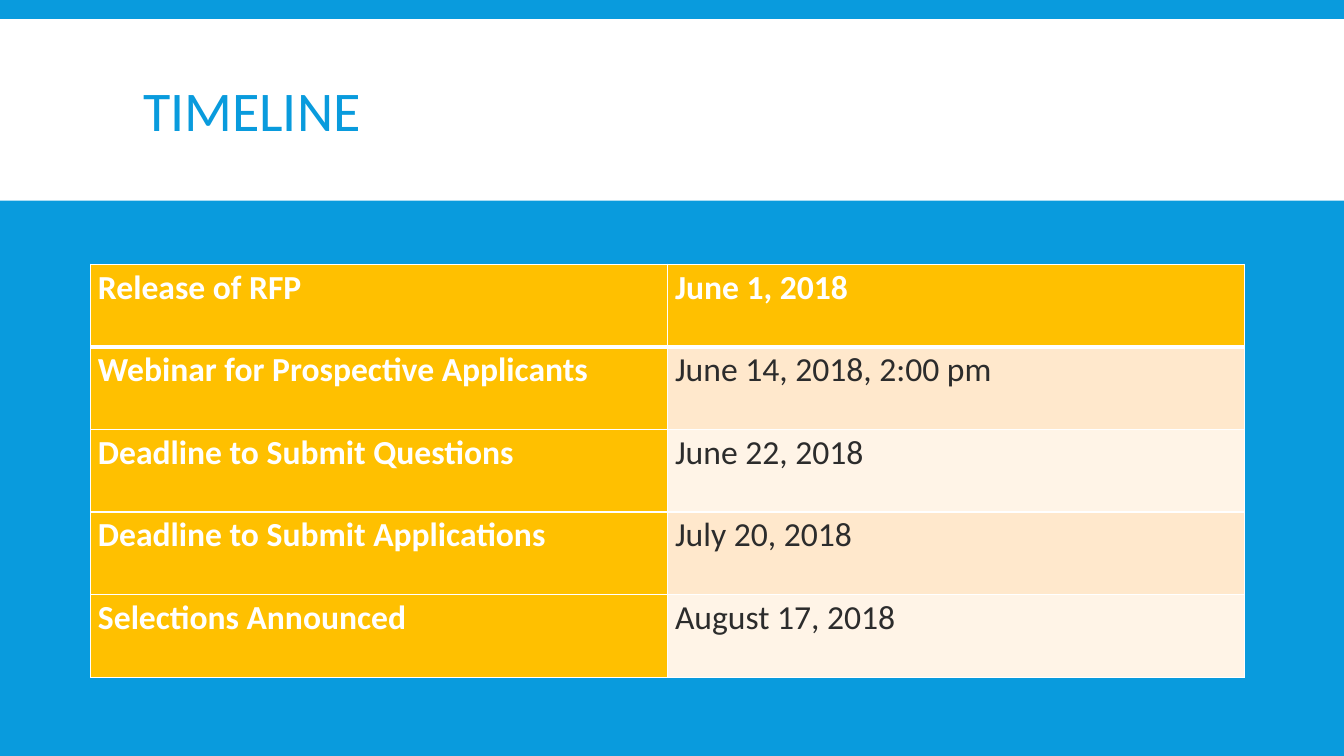
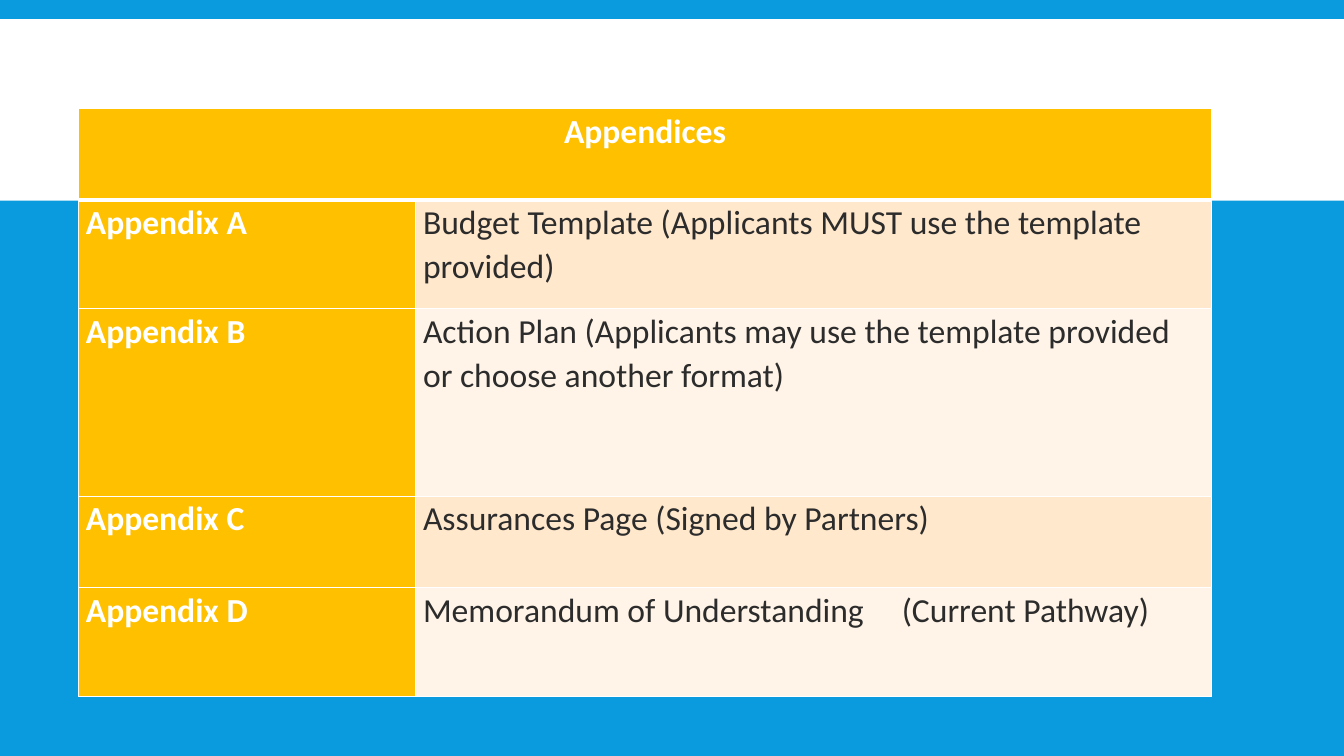
from lxml.etree import SubElement
from pptx import Presentation
from pptx.dml.color import RGBColor
from pptx.enum.shapes import MSO_SHAPE
from pptx.enum.text import MSO_ANCHOR, MSO_AUTO_SIZE, PP_ALIGN
from pptx.oxml import parse_xml
from pptx.oxml.ns import nsdecls, qn
from pptx.util import Pt

BLUE, WHITE, INK, GOLD = "099BDD", "FFFFFF", "2C2C2C", "FFC000"
STRIPES = ["FFE8CC", "FFF4E7"]
FONT = "Calibri"
SLIDE_WIDTH, SLIDE_HEIGHT = 960, 540
TITLE_ONLY, BLANK = 5, 6

TIMELINE = [
    ("Release of RFP", "June 1, 2018"),
    ("Webinar for Prospective Applicants", "June 14, 2018, 2:00 pm"),
    ("Deadline to Submit Questions", "June 22, 2018"),
    ("Deadline to Submit Applications", "July 20, 2018"),
    ("Selections Announced", "August 17, 2018"),
]
APPENDICES = [
    ("Appendices", ""),
    ("Appendix A", "Budget Template (Applicants MUST use the template provided)"),
    ("Appendix B", "Action Plan (Applicants may use the template provided or choose another format)"),
    ("Appendix C", "Assurances Page (Signed by Partners)"),
    ("Appendix D", "Memorandum of Understanding\t(Current Pathway)"),
]


def paint(fill, colour):
    """Give a fill one solid colour."""
    fill.solid()
    fill.fore_color.rgb = RGBColor.from_string(colour)


def write(frame, text, size=24, colour=INK, bold=False, align=PP_ALIGN.LEFT, spacing=1.07, tab=None):
    """Write one formatted paragraph, with an optional tab stop."""
    paragraph = frame.paragraphs[0]
    paragraph.alignment = align
    paragraph.line_spacing = spacing
    if tab:
        stops = SubElement(paragraph._p.get_or_add_pPr(), qn("a:tabLst"))
        SubElement(stops, qn("a:tab"), pos=str(Pt(tab)), algn="l")
    run = paragraph.add_run()
    run.text = text
    run.font.name = FONT
    run.font.size = Pt(size)
    run.font.bold = bold
    run.font.color.rgb = RGBColor.from_string(colour)


def border(cell, top=1, bottom=1):
    """Draw white lines round a cell, with widths in points."""
    widths = {"lnL": 1, "lnR": 1, "lnT": top, "lnB": bottom}
    properties = cell._tc.get_or_add_tcPr()
    for position, (side, width) in enumerate(widths.items()):
        properties.insert(position, parse_xml(
            f'<a:{side} {nsdecls("a")} w="{Pt(width)}"><a:solidFill>'
            f'<a:srgbClr val="{WHITE}"/></a:solidFill></a:{side}>'))


def add_banded_slide(prs, layout):
    """Add a slide with the white band behind its contents."""
    slide = prs.slides.add_slide(prs.slide_layouts[layout])
    band = slide.shapes.add_shape(MSO_SHAPE.RECTANGLE, 0, Pt(13.7), Pt(SLIDE_WIDTH), Pt(129.6))
    band.shadow.inherit = False
    paint(band.fill, WHITE)
    band.line.fill.background()
    slide.shapes._spTree.insert(2, band._element)
    return slide


def set_title(slide, text):
    """Place and write the slide title."""
    title = slide.shapes.title
    title.left, title.top, title.width, title.height = Pt(95), Pt(22.3), Pt(770.4), Pt(118.8)
    title.text_frame.auto_size = MSO_AUTO_SIZE.NONE
    title.text_frame.vertical_anchor = MSO_ANCHOR.MIDDLE
    write(title.text_frame, text, size=40, colour=BLUE, spacing=0.85)


def add_grid(slide, rows, left, top, widths, heights, merge_header=False, tab=None):
    """Add a table with a gold header row and a gold first column."""
    table = slide.shapes.add_table(len(rows), len(widths), Pt(left), Pt(top),
                                   Pt(sum(widths)), Pt(sum(heights))).table
    for column, width in zip(table.columns, widths):
        column.width = Pt(width)
    for row, height in zip(table.rows, heights):
        row.height = Pt(height)
    if merge_header:
        table.cell(0, 0).merge(table.cell(0, len(widths) - 1))
    for r, entries in enumerate(rows):
        for c, entry in enumerate(entries):
            cell = table.cell(r, c)
            heading = r == 0 or c == 0
            cell.margin_left = cell.margin_right = Pt(5.2)
            cell.margin_top = cell.margin_bottom = 0
            paint(cell.fill, GOLD if heading else STRIPES[(r - 1) % 2])
            border(cell, top=3 if r == 1 else 1, bottom=3 if r == 0 else 1)
            if entry:
                write(cell.text_frame, entry, colour=WHITE if heading else INK, bold=heading,
                      align=PP_ALIGN.CENTER if merge_header and r == 0 else PP_ALIGN.LEFT,
                      tab=tab if "\t" in entry else None)


def main():
    """Build and save the two slides."""
    prs = Presentation()
    prs.slide_width, prs.slide_height = Pt(SLIDE_WIDTH), Pt(SLIDE_HEIGHT)
    paint(prs.slide_master.background.fill, BLUE)

    timeline = add_banded_slide(prs, TITLE_ONLY)
    set_title(timeline, "TIMELINE")
    add_grid(timeline, TIMELINE, 64.8, 188.8, [412.2] * 2, [59] * len(TIMELINE))

    appendices = add_banded_slide(prs, BLANK)
    add_grid(appendices, APPENDICES, 56.2, 77.4, [240.8, 568.4], [65.2, 77.8, 134, 65.2, 77.8],
             merge_header=True, tab=342)
    prs.save("out.pptx")


if __name__ == "__main__":
    main()
